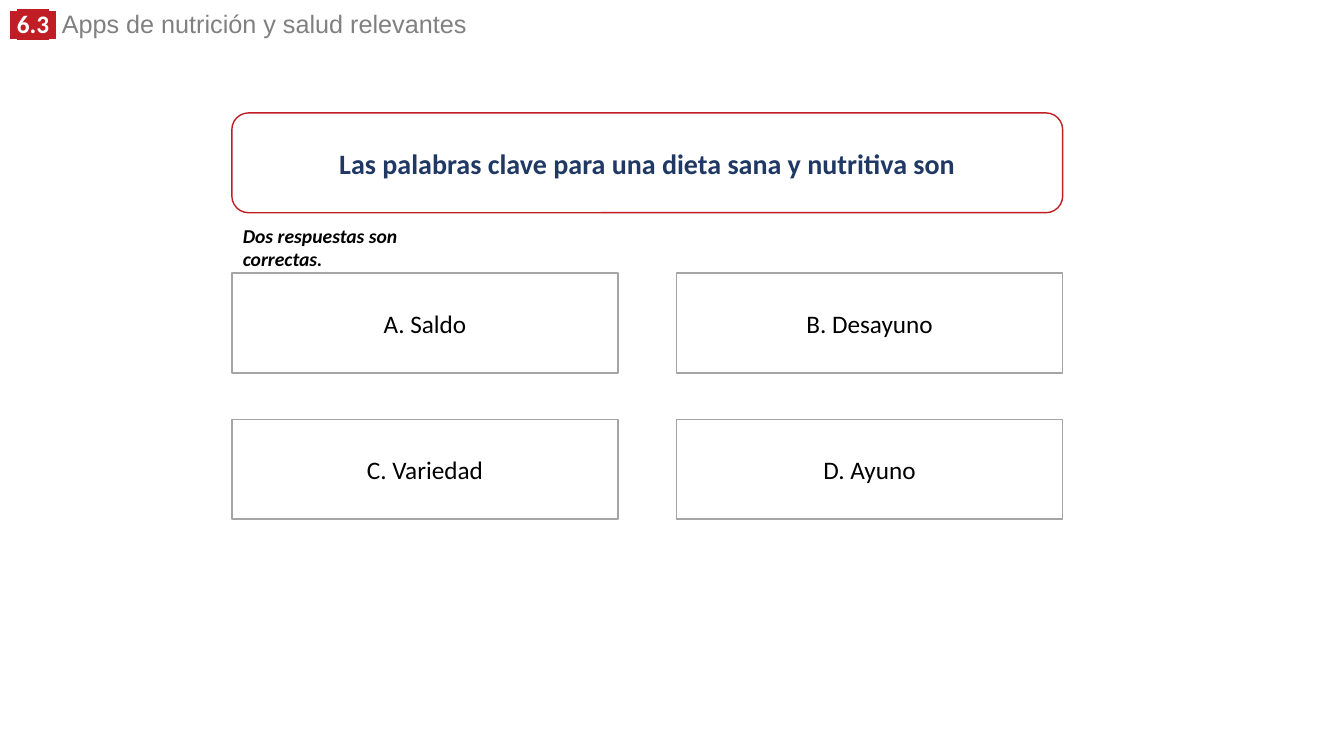
from lxml.etree import SubElement
from pptx import Presentation
from pptx.dml.color import RGBColor as RGB
from pptx.enum.shapes import MSO_SHAPE as SHAPE
from pptx.enum.text import MSO_ANCHOR as ANCHOR, MSO_AUTO_SIZE as FIT, PP_ALIGN as ALIGN
from pptx.oxml.ns import qn
from pptx.util import Inches, Pt

RED = RGB(0xC0, 0x1E, 0x24)
NAVY = RGB(0x20, 0x38, 0x64)
GRAY = RGB(0x80, 0x80, 0x80)
EDGE = RGB(0xA5, 0xA5, 0xA5)
WHITE = RGB(0xFF, 0xFF, 0xFF)
BLACK = RGB(0, 0, 0)


def write(para, text, size=18, face="Calibri", color=BLACK, bold=False, slant=False, mark=None):
    run = para.add_run()
    run.text = text
    font = run.font
    font.size, font.bold, font.italic = Pt(size), bold, slant
    font.color.rgb = color
    if mark is not None:
        props = run._r.get_or_add_rPr()
        light = SubElement(props, qn("a:highlight"))
        SubElement(light, qn("a:srgbClr"), val=str(mark))
    font.name = face


def place(kind, left, top, width, height, edge=None):
    area = [Inches(n) for n in (left, top, width, height)]
    if kind is None:
        box = slide.shapes.add_textbox(*area)
        box.text_frame.auto_size = FIT.SHAPE_TO_FIT_TEXT
    else:
        box = slide.shapes.add_shape(kind, *area)
        box.shadow.inherit = False
        box.fill.solid()
        box.fill.fore_color.rgb = WHITE
        box.line.color.rgb = edge
        box.line.width = Pt(1)
        box.text_frame.vertical_anchor = ANCHOR.MIDDLE
        box.text_frame.paragraphs[0].alignment = ALIGN.CENTER
    box.text_frame.word_wrap = True
    return box.text_frame.paragraphs[0]


deck = Presentation()
deck.slide_width, deck.slide_height = Inches(13.33), Inches(7.5)
slide = deck.slides.add_slide(deck.slide_layouts[6])

left, top = 2.3, 2.71
wide, high = 3.83, 0.99
step, drop = 4.41, 1.45

title = place(None, 0, 0.09, 9.52, 0.35)
title.line_spacing = 0.8
for text, face in ((" ", "Arial"), ("6.3", "Calibri"), (" ", "Arial")):
    write(title, text, face=face, color=WHITE, bold=True, mark=RED)
write(title, " Apps de nutrición y salud relevantes", face="Arial", color=GRAY)

quiz = place(SHAPE.ROUNDED_RECTANGLE, left, 1.12, step + wide, high, RED)
write(quiz, "Las palabras clave para una dieta sana y nutritiva son", size=20, color=NAVY, bold=True)

for i, text in enumerate(("A. Saldo", "B. Desayuno", "C. Variedad", "D. Ayuno")):
    row, col = divmod(i, 2)
    reply = place(SHAPE.RECTANGLE, left + col * step, top + row * drop, wide, high, EDGE)
    write(reply, text)

hint = place(None, left + 0.01, 2.17, 2.24, 0.34)
write(hint, "Dos respuestas son correctas.", size=14, bold=True, slant=True)

deck.save("out.pptx")
